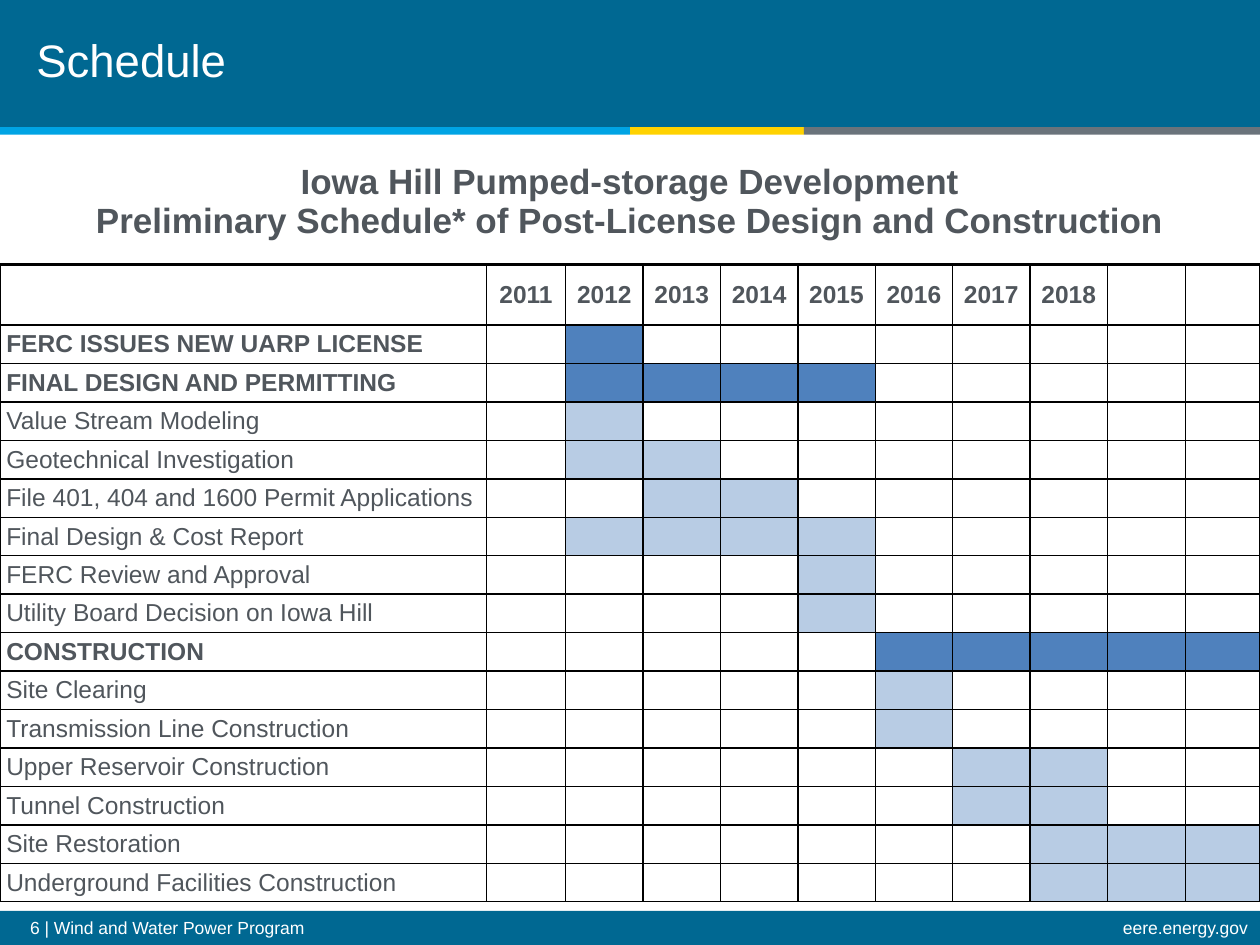
from lxml import etree
from pptx import Presentation
from pptx.dml.color import RGBColor
from pptx.enum.shapes import MSO_SHAPE
from pptx.enum.text import MSO_ANCHOR, PP_ALIGN
from pptx.oxml.ns import qn
from pptx.util import Inches, Pt

RECTANGLE = MSO_SHAPE.RECTANGLE
MIDDLE = MSO_ANCHOR.MIDDLE
LEFT, CENTER, RIGHT = PP_ALIGN.LEFT, PP_ALIGN.CENTER, PP_ALIGN.RIGHT

WHITE, BLACK, GRAY = "FFFFFF", "000000", "50565C"
PHASE, TASK = "4F81BD", "B8CCE4"

BANDS = [
    (0, 0, 10, 1.01, "006892"),
    (0, 7.23, 10, 0.27, "006892"),
    (0, 1.01, 5, 0.06, "00A4E4"),
    (5, 1.01, 1.38, 0.06, "FFD200"),
    (6.38, 1.01, 3.62, 0.06, "6A737B"),
]

HEADING = [
    "Iowa Hill Pumped-storage Development",
    "Preliminary Schedule* of Post-License Design and Construction",
]
FIRST_YEAR, LAST_YEAR = 2011, 2018
COLUMN_WIDTHS = [3.86, 0.63] + [4.3 / 7] * 7 + [0.62, 0.59]

ACTIVITIES = [
    ("FERC ISSUES NEW UARP LICENSE", PHASE, 2012, 2012),
    ("FINAL DESIGN AND PERMITTING", PHASE, 2012, 2015),
    ("Value Stream Modeling", TASK, 2012, 2012),
    ("Geotechnical Investigation", TASK, 2012, 2013),
    ("File 401, 404 and 1600 Permit Applications", TASK, 2013, 2014),
    ("Final Design & Cost Report", TASK, 2012, 2015),
    ("FERC Review and Approval", TASK, 2015, 2015),
    ("Utility Board Decision on Iowa Hill", TASK, 2015, 2015),
    ("CONSTRUCTION", PHASE, 2016, 2020),
    ("Site Clearing", TASK, 2016, 2016),
    ("Transmission Line Construction", TASK, 2016, 2016),
    ("Upper Reservoir Construction", TASK, 2017, 2018),
    ("Tunnel Construction", TASK, 2017, 2018),
    ("Site Restoration", TASK, 2018, 2020),
    ("Underground Facilities Construction", TASK, 2018, 2020),
]
ROW_HEIGHTS = [1, 0.48] + [4.58 / len(ACTIVITIES)] * len(ACTIVITIES)


def color(value):
    return RGBColor.from_string(value)


def apply_format(target, values):
    for name, value in values.items():
        setattr(target, name, value)


def write_lines(frame, lines, size, text_color, bold=False, alignment=LEFT, spacing=None):
    for index, line in enumerate(lines):
        paragraph = frame.add_paragraph() if index else frame.paragraphs[0]
        apply_format(paragraph, {"alignment": alignment, "line_spacing": spacing})
        paragraph.text = line
        apply_format(paragraph.font, {"name": "Arial", "size": Pt(size), "bold": bold})
        paragraph.font.color.rgb = color(text_color)


def add_band(slide, left, top, width, height, fill):
    shape = slide.shapes.add_shape(
        RECTANGLE, Inches(left), Inches(top), Inches(width), Inches(height))
    shape.shadow.inherit = False
    shape.fill.solid()
    shape.fill.fore_color.rgb = color(fill)
    shape.line.fill.background()


def add_text(slide, left, top, width, height, text, size, **style):
    shape = slide.shapes.add_textbox(
        Inches(left), Inches(top), Inches(width), Inches(height))
    apply_format(shape.text_frame, {
        "word_wrap": True, "vertical_anchor": MIDDLE,
        "margin_top": 0, "margin_bottom": 0})
    write_lines(shape.text_frame, [text], size, WHITE, **style)


def set_borders(cell, widths):
    properties = cell._tc.get_or_add_tcPr()
    for index, (side, width) in enumerate(widths.items()):
        line = etree.Element(qn(f"a:ln{side}"), w=str(Pt(width)))
        fill = etree.SubElement(line, qn("a:solidFill"))
        etree.SubElement(fill, qn("a:srgbClr"), val=BLACK)
        properties.insert(index, line)


def format_cell(cell, lines, borders, size=14, fill=None, **style):
    apply_format(cell, {
        "vertical_anchor": MIDDLE, "margin_left": Inches(0.05),
        "margin_right": Inches(0.05), "margin_top": 0, "margin_bottom": 0})
    write_lines(cell.text_frame, lines, size, GRAY, **style)
    if fill:
        cell.fill.solid()
        cell.fill.fore_color.rgb = color(fill)
    else:
        cell.fill.background()
    set_borders(cell, borders)


def add_schedule(slide):
    columns = len(COLUMN_WIDTHS)
    table = slide.shapes.add_table(
        len(ROW_HEIGHTS), columns, 0, Inches(1.1),
        Inches(sum(COLUMN_WIDTHS)), Inches(sum(ROW_HEIGHTS))).table
    apply_format(table, {"first_row": False, "horz_banding": False})
    for column, width in zip(table.columns, COLUMN_WIDTHS):
        column.width = Inches(width)
    for row, height in zip(table.rows, ROW_HEIGHTS):
        row.height = Inches(height)

    for column in range(columns):
        lines = [] if column else HEADING
        format_cell(table.cell(0, column), lines, {"B": 1.5},
                    size=20, bold=True, alignment=CENTER)
    table.cell(0, 0).merge(table.cell(0, columns - 1))

    header_borders = {"L": 1, "R": 1, "T": 1.5, "B": 1.5}
    for column in range(columns):
        year = FIRST_YEAR + column - 1
        label = str(year) if FIRST_YEAR <= year <= LAST_YEAR else ""
        format_cell(table.cell(1, column), [label], header_borders,
                    bold=True, alignment=CENTER)

    for row, (name, fill, start, end) in enumerate(ACTIVITIES, 2):
        borders = {"L": 1, "R": 1, "T": 1.5 if row == 2 else 1, "B": 1}
        format_cell(table.cell(row, 0), [name], borders, bold=fill == PHASE)
        for column in range(1, columns):
            active = start <= FIRST_YEAR + column - 1 <= end
            format_cell(table.cell(row, column), [""], borders,
                        fill=fill if active else None)


def main():
    presentation = Presentation()
    apply_format(presentation, {"slide_width": Inches(10), "slide_height": Inches(7.5)})
    slide = presentation.slides.add_slide(presentation.slide_layouts[6])
    for band in BANDS:
        add_band(slide, *band)
    add_text(slide, 0.14, 7.24, 7.97, 0.26, "6 | Wind and Water Power Program", 10, spacing=0.9)
    add_text(slide, 5.99, 7.24, 4.01, 0.26, "eere.energy.gov", 10, alignment=RIGHT, spacing=0.9)
    add_text(slide, 0.19, 0, 6.19, 0.99, "Schedule", 26, spacing=Pt(28))
    add_schedule(slide)
    presentation.save("out.pptx")


if __name__ == "__main__":
    main()
